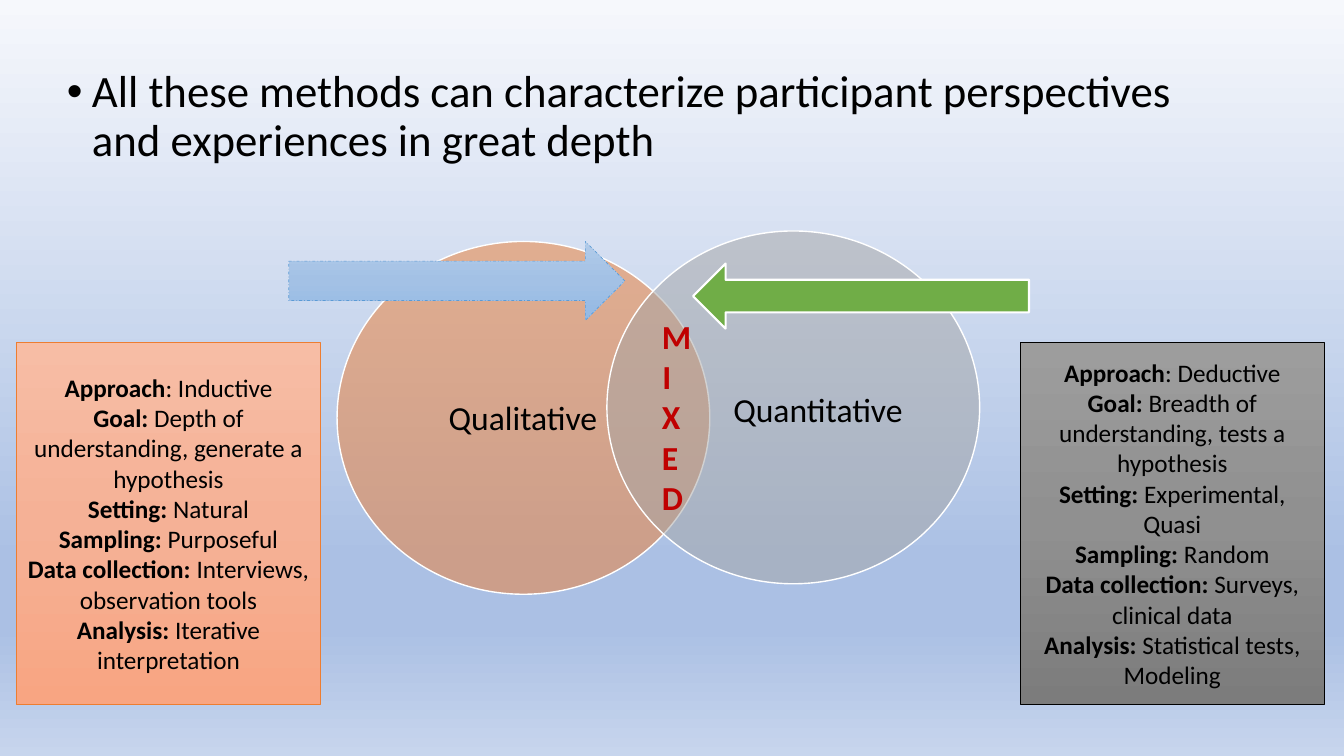
from lxml.etree import SubElement
from pptx import Presentation
from pptx.dml.color import RGBColor
from pptx.enum.dml import MSO_LINE
from pptx.enum.shapes import MSO_SHAPE
from pptx.enum.text import MSO_ANCHOR, MSO_AUTO_SIZE, PP_ALIGN
from pptx.oxml.ns import qn
from pptx.util import Pt

EMU_PER_PX = 9525
FONT = "Calibri"
BACKGROUND = [(0, "F6F8FC"), (74, "ABC0E4"), (83, "ABC0E4"), (100, "C7D5ED")]
BLUE = [(0, "B1CBE9"), (50, "A3C1E5"), (100, "93B9E4")]
ORANGE = [(0, "F7BDA5"), (50, "F5B196"), (100, "F8A582")]
GRAY = [(0, "9D9D9D"), (50, "909090"), (100, "7C7C7C")]

QUALITATIVE = [
    ("Approach", ": Inductive"),
    ("Goal: ", "Depth of understanding, generate a hypothesis"),
    ("Setting: ", "Natural"),
    ("Sampling: ", "Purposeful"),
    ("Data collection: ", "Interviews, observation tools"),
    ("Analysis: ", "Iterative interpretation"),
]
QUANTITATIVE = [
    ("Approach", ": Deductive"),
    ("Goal: ", "Breadth of understanding, tests a hypothesis"),
    ("Setting: ", "Experimental, Quasi"),
    ("Sampling: ", "Random"),
    ("Data collection: ", "Surveys, clinical data"),
    ("Analysis: ", "Statistical tests, Modeling"),
]


def px(n):
    return n * EMU_PER_PX


def rgb(color):
    return RGBColor.from_string(color)


def set_gradient(fill, element, stops):
    """Fill from top to bottom; element is the XML that holds the fill."""
    fill.gradient()
    fill.gradient_angle = 270
    gs_list = element.find(".//" + qn("a:gsLst"))
    for gs in list(gs_list):
        gs_list.remove(gs)
    for percent, color in stops:
        gs = SubElement(gs_list, qn("a:gs"), pos=str(percent * 1000))
        SubElement(gs, qn("a:srgbClr"), val=color)


def add_run(p, text, size, color="000000", bold=False):
    r = p.add_run()
    r.text = text
    r.font.name = FONT
    r.font.size = Pt(size)
    r.font.bold = bold
    r.font.color.rgb = rgb(color)


def add_figure(slide, kind, box, fill, line, width):
    """Add a preset shape; fill is a hex colour or a list of gradient stops."""
    sp = slide.shapes.add_shape(kind, *map(px, box))
    sp.shadow.inherit = False
    if isinstance(fill, str):
        sp.fill.solid()
        sp.fill.fore_color.rgb = rgb(fill)
    else:
        set_gradient(sp.fill, sp._element.spPr, fill)
    sp.line.color.rgb = rgb(line)
    sp.line.width = Pt(width)
    return sp


def add_circle(slide, box, color):
    """Add a half transparent circle of the Venn diagram."""
    sp = add_figure(slide, MSO_SHAPE.OVAL, box, color, "FFFFFF", 1)
    clr = sp._element.spPr.find(qn("a:solidFill")).find(qn("a:srgbClr"))
    SubElement(clr, qn("a:alpha"), val="50000")


def add_label(slide, box, text, color="000000", bold=False, anchor=MSO_ANCHOR.MIDDLE):
    tf = slide.shapes.add_textbox(*map(px, box)).text_frame
    tf.word_wrap = True
    tf.vertical_anchor = anchor
    p = tf.paragraphs[0]
    p.alignment = PP_ALIGN.CENTER
    add_run(p, text, 24, color, bold)
    return tf


def add_panel(slide, left, fill, line, facts):
    sp = add_figure(slide, MSO_SHAPE.RECTANGLE, (left, 326, 289, 345), fill, line, 0.5)
    tf = sp.text_frame
    tf.word_wrap = True
    tf.vertical_anchor = MSO_ANCHOR.MIDDLE
    for i, (term, detail) in enumerate(facts):
        p = tf.add_paragraph() if i else tf.paragraphs[0]
        p.alignment = PP_ALIGN.CENTER
        add_run(p, term, 18, bold=True)
        add_run(p, detail, 18)


def fill_body(body, text):
    body.left, body.top, body.width, body.height = map(px, (54, 61, 1135, 587))
    tf = body.text_frame
    tf.auto_size = MSO_AUTO_SIZE.NONE
    tf.vertical_anchor = MSO_ANCHOR.TOP
    p = tf.paragraphs[0]
    p.line_spacing = 0.9
    p.space_before = Pt(10)
    pPr = p._p.get_or_add_pPr()
    pPr.set("marL", str(px(24)))
    pPr.set("indent", str(px(-24)))
    SubElement(pPr, qn("a:buFont"), typeface="Arial")
    SubElement(pPr, qn("a:buChar"), char="•")
    add_run(p, text, 32)


def main():
    prs = Presentation()
    prs.slide_width, prs.slide_height = px(1280), px(720)
    slide = prs.slides.add_slide(prs.slide_layouts[1])
    set_gradient(slide.background.fill, slide._element, BACKGROUND)

    title = slide.shapes.title._element
    title.getparent().remove(title)
    fill_body(slide.placeholders[1],
              "All these methods can characterize participant perspectives "
              "and experiences in great depth")

    add_circle(slide, (321, 230, 355, 336), "ED7D31")
    add_label(slide, (372, 279, 252, 237), "Qualitative")
    add_circle(slide, (578, 220, 355, 336), "A5A5A5")
    add_label(slide, (653, 271, 252, 237), "Quantitative")

    # The narrow box breaks the word after each letter
    mixed = add_label(slide, (621, 296, 28, 204), "MIXED", "C00000", True, MSO_ANCHOR.TOP)
    mixed.auto_size = MSO_AUTO_SIZE.SHAPE_TO_FIT_TEXT

    arrow = add_figure(slide, MSO_SHAPE.RIGHT_ARROW, (275, 230, 320, 75), BLUE, "5B9BD5", 0.5)
    arrow.line.dash_style = MSO_LINE.DASH_DOT
    add_figure(slide, MSO_SHAPE.LEFT_ARROW, (660, 251, 320, 62), "70AD47", "FFFFFF", 1.5)

    add_panel(slide, 16, ORANGE, "ED7D31", QUALITATIVE)
    add_panel(slide, 972, GRAY, "000000", QUANTITATIVE)
    prs.save("out.pptx")


if __name__ == "__main__":
    main()
